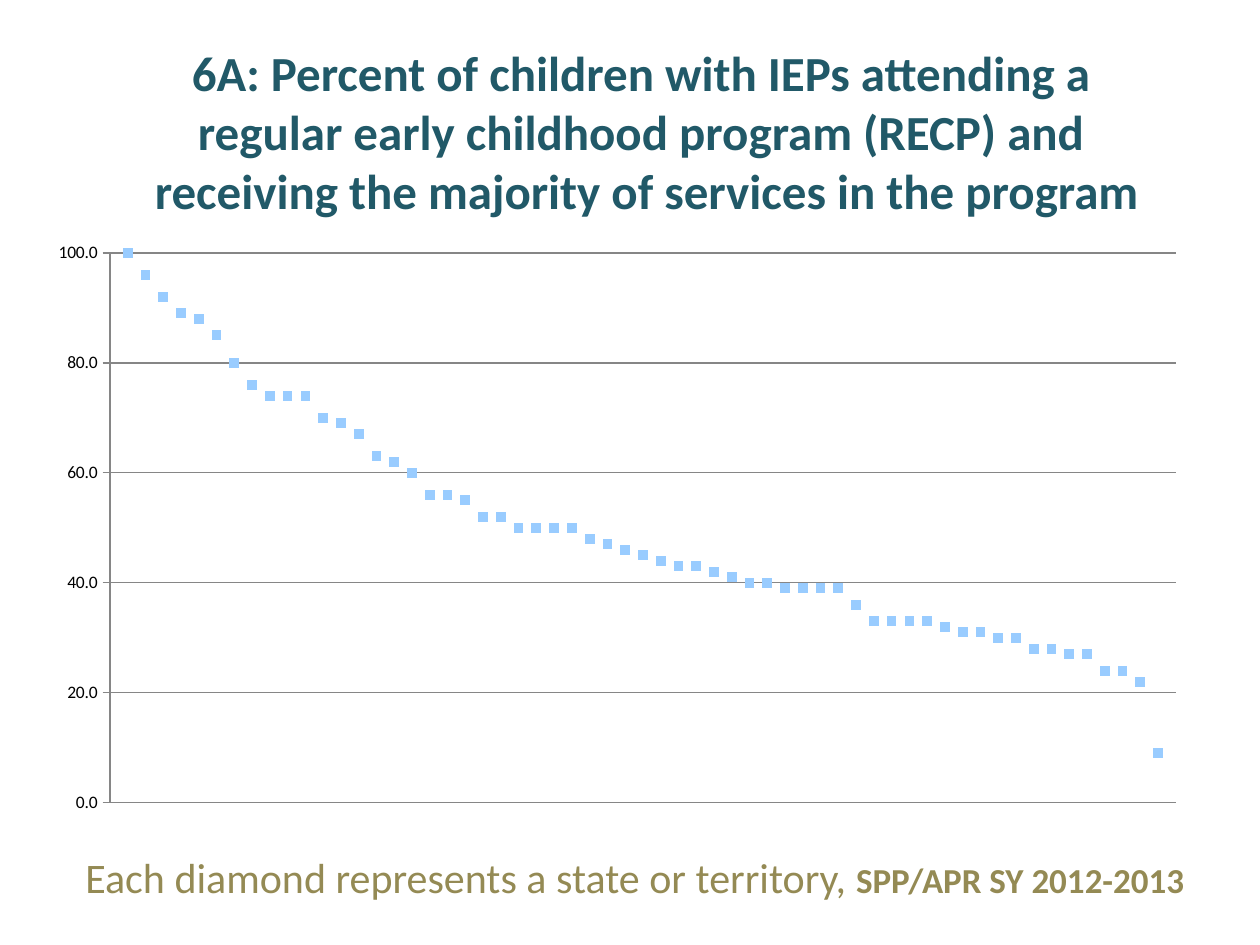
from typing import NamedTuple

from lxml.etree import SubElement
from pptx import Presentation
from pptx.chart.data import XyChartData
from pptx.dml.color import RGBColor
from pptx.enum.chart import XL_CHART_TYPE, XL_MARKER_STYLE, XL_TICK_MARK
from pptx.enum.text import MSO_ANCHOR, MSO_AUTO_SIZE, PP_ALIGN
from pptx.oxml.ns import qn
from pptx.util import Emu, Pt

PX_PER_INCH = 126
FONT = "Calibri"
TEAL, OLIVE, SKY, GRAY, BLACK = "215968", "948A54", "99CCFF", "868686", "000000"
PERCENTS = [
    100, 96, 92, 89, 88, 85, 80, 76, 74, 74, 74, 70, 69, 67, 63, 62, 60, 56, 56, 55,
    52, 52, 50, 50, 50, 50, 48, 47, 46, 45, 44, 43, 43, 42, 41, 40, 40, 39, 39, 39,
    39, 36, 33, 33, 33, 33, 32, 31, 31, 30, 30, 28, 28, 27, 27, 24, 24, 22, 9,
]


class Area(NamedTuple):
    left: int
    top: int
    width: int
    height: int


TITLE = Area(53, 63, 1187, 136)
CAPTION = Area(73, 845, 1187, 63)
CHART = Area(37, 231, 1163, 593)
PLOT = Area(110, 253, 1066, 550)


def px(length: int) -> Emu:
    return Emu(round(length * 914400 / PX_PER_INCH))


def place(area: Area) -> tuple[Emu, ...]:
    return tuple(px(length) for length in area)


def color(value: str) -> RGBColor:
    return RGBColor.from_string(value)


def format_font(font, *, size: int, fill: str, bold: bool = False) -> None:
    font.name = FONT
    font.size = Pt(size)
    font.bold = bold
    font.color.rgb = color(fill)


def add_text(para, text: str, **style) -> None:
    span = para.add_run()
    span.text = text
    format_font(span.font, **style)


def add_title(slide) -> None:
    title = slide.shapes.title
    title.left, title.top, title.width, title.height = place(TITLE)
    frame = title.text_frame
    frame.word_wrap = True
    frame.auto_size = MSO_AUTO_SIZE.NONE
    frame.vertical_anchor = MSO_ANCHOR.MIDDLE
    para = frame.paragraphs[0]
    para.alignment = PP_ALIGN.CENTER
    lines = [
        "6A: Percent of children with IEPs attending a ",
        "regular early childhood program (RECP) and ",
        "receiving the majority of services in the program",
    ]
    for index, line in enumerate(lines):
        if index:
            para.add_line_break()
        add_text(para, line, size=28, fill=TEAL, bold=True)


def add_caption(slide) -> None:
    box = slide.shapes.add_textbox(*place(CAPTION))
    box.text_frame.word_wrap = True
    box.text_frame.auto_size = MSO_AUTO_SIZE.SHAPE_TO_FIT_TEXT
    para = box.text_frame.paragraphs[0]
    add_text(para, "Each diamond represents a state or territory, ", size=24, fill=OLIVE)
    add_text(para, "SPP/APR SY 2012-2013", size=20, fill=OLIVE, bold=True)


def set_plot_area(chart) -> None:
    plot_area = chart._chartSpace.chart.plotArea
    for old in plot_area.findall(qn("c:layout")):
        plot_area.remove(old)
    layout = plot_area.makeelement(qn("c:layout"), {})
    plot_area.insert(0, layout)
    manual = SubElement(layout, qn("c:manualLayout"))
    settings = {
        "layoutTarget": "inner",
        "xMode": "edge",
        "yMode": "edge",
        "x": round((PLOT.left - CHART.left) / CHART.width, 4),
        "y": round((PLOT.top - CHART.top) / CHART.height, 4),
        "w": round(PLOT.width / CHART.width, 4),
        "h": round(PLOT.height / CHART.height, 4),
    }
    for name, value in settings.items():
        SubElement(manual, qn(f"c:{name}"), val=str(value))


def format_line(line) -> None:
    line.color.rgb = color(GRAY)
    line.width = Pt(0.75)


def add_scatter(slide) -> None:
    data = XyChartData(number_format="0.0")
    states = data.add_series("Series 1")
    for rank, percent in enumerate(PERCENTS, start=1):
        states.add_data_point(rank, percent)
    chart = slide.shapes.add_chart(XL_CHART_TYPE.XY_SCATTER, *place(CHART), data).chart
    chart.has_title = False
    chart.has_legend = False
    format_font(chart.font, size=10, fill=BLACK)
    set_plot_area(chart)

    ranks = chart.category_axis
    ranks.minimum_scale, ranks.maximum_scale = 0, 60
    ranks.has_major_gridlines = False
    ranks.visible = False

    percents = chart.value_axis
    percents.minimum_scale, percents.maximum_scale = 0, 100
    percents.major_unit = 20
    percents.major_tick_mark = XL_TICK_MARK.OUTSIDE
    percents.minor_tick_mark = XL_TICK_MARK.NONE
    percents.tick_labels.number_format = "0.0"
    percents.tick_labels.number_format_is_linked = False
    percents.has_major_gridlines = True
    format_line(percents.format.line)
    format_line(percents.major_gridlines.format.line)

    chart.plots[0].vary_by_categories = False
    series = chart.plots[0].series[0]
    series.smooth = False
    series.format.line.fill.background()
    series.marker.style = XL_MARKER_STYLE.SQUARE
    series.marker.size = 5
    series.marker.format.fill.solid()
    series.marker.format.fill.fore_color.rgb = color(SKY)
    series.marker.format.line.fill.background()


def main() -> None:
    deck = Presentation()
    deck.slide_width, deck.slide_height = px(1260), px(945)
    slide = deck.slides.add_slide(deck.slide_layouts[5])
    add_title(slide)
    add_caption(slide)
    add_scatter(slide)
    deck.save("out.pptx")


if __name__ == "__main__":
    main()
